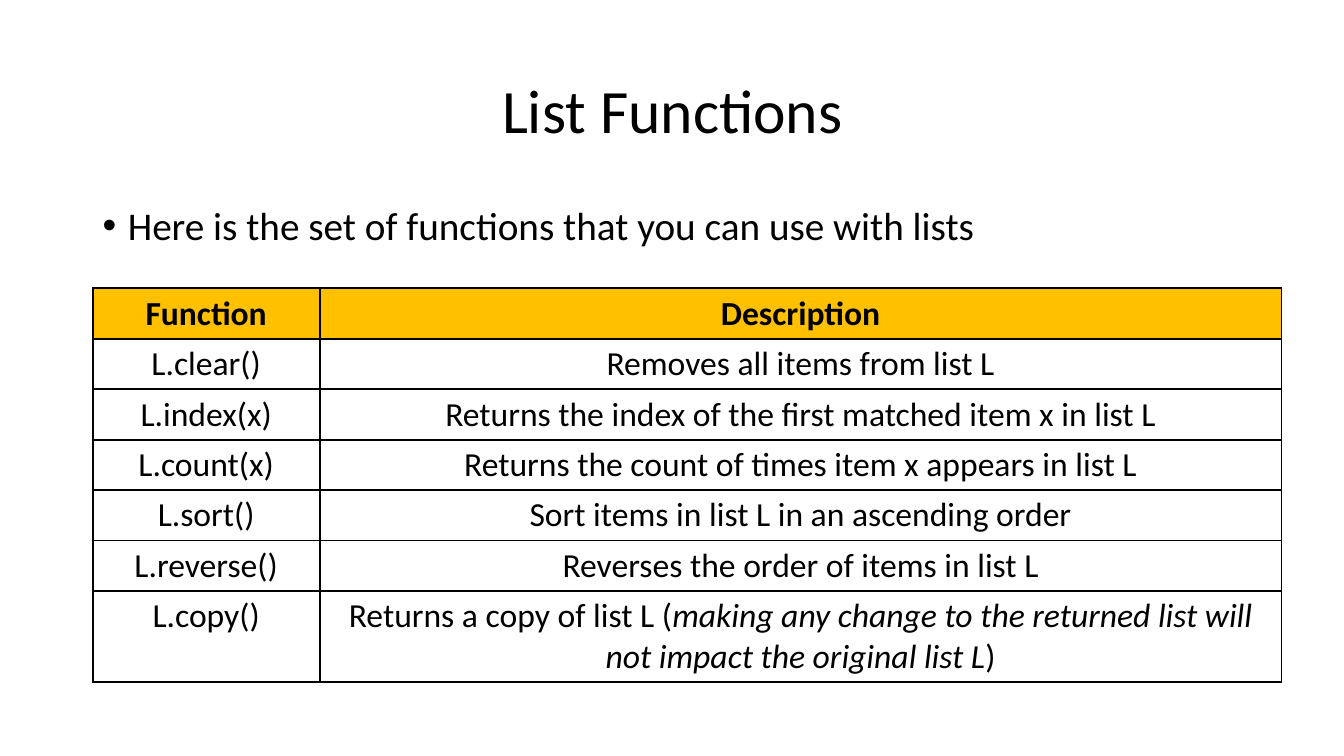
from lxml.etree import SubElement
from pptx import Presentation
from pptx.dml.color import RGBColor
from pptx.enum.text import MSO_ANCHOR, PP_ALIGN
from pptx.oxml.ns import qn
from pptx.util import Inches, Pt

SLIDE_SIZE = (13.33, 7.5)
MARGIN = 0.92
CONTENT_WIDTH = 11.5
TITLE = "List Functions"
INTRO = "Here is the set of functions that you can use with lists"
HEADER = ("Function", "Description")
FUNCTIONS = [
    ("L.clear()", "Removes all items from list L"),
    ("L.index(x)", "Returns the index of the first matched item x in list L"),
    ("L.count(x)", "Returns the count of times item x appears in list L"),
    ("L.sort()", "Sort items in list L in an ascending order"),
    ("L.reverse()", "Reverses the order of items in list L"),
    ("L.copy()", [
        ("Returns a copy of list L (", False),
        ("making any change to the returned list will not impact the original list L", True),
        (")", False),
    ]),
]
COLUMN_WIDTHS = (2.25, 9.54)
ROW_HEIGHT = 0.41
TABLE_TOP = 2.86
BORDER_WIDTH = 1.5
INK, HEADER_FILL, BODY_FILL = "000000", "FFC000", "FFFFFF"
CENTERED = {"alignment": PP_ALIGN.CENTER}
TITLE_FORMAT = {"alignment": PP_ALIGN.CENTER, "line_spacing": 0.9}
INTRO_FORMAT = {"line_spacing": 0.9, "space_before": Pt(10)}


def color(value):
    return RGBColor.from_string(value)


def apply_format(target, values):
    for name, value in values.items():
        setattr(target, name, value)


def write(paragraph, content, size, paragraph_format, bold=False):
    apply_format(paragraph, paragraph_format)
    pieces = [(content, False)] if isinstance(content, str) else content
    for text, italic in pieces:
        run = paragraph.add_run()
        run.text = text
        apply_format(run.font, {"name": "Calibri", "size": Pt(size), "bold": bold, "italic": italic})
        run.font.color.rgb = color(INK)


def add_text(slide, top, height, anchor, content, size, paragraph_format):
    box = slide.shapes.add_textbox(*map(Inches, (MARGIN, top, CONTENT_WIDTH, height)))
    apply_format(box.text_frame, {"word_wrap": True, "vertical_anchor": anchor})
    paragraph = box.text_frame.paragraphs[0]
    write(paragraph, content, size, paragraph_format)
    return paragraph


def add_bullet(paragraph, indent):
    properties = paragraph._p.get_or_add_pPr()
    properties.set("marL", str(Inches(indent)))
    properties.set("indent", str(-Inches(indent)))
    SubElement(properties, qn("a:buFont"), typeface="Arial")
    SubElement(properties, qn("a:buChar"), char="•")


def add_borders(cell):
    properties = cell._tc.get_or_add_tcPr()
    for position, side in enumerate(("lnL", "lnR", "lnT", "lnB")):
        line = properties.makeelement(qn(f"a:{side}"), {"w": str(Pt(BORDER_WIDTH))})
        fill = SubElement(line, qn("a:solidFill"))
        SubElement(fill, qn("a:srgbClr"), val=INK)
        properties.insert(position, line)


def add_function_table(slide):
    rows = [HEADER, *FUNCTIONS]
    frame = slide.shapes.add_table(
        len(rows), len(COLUMN_WIDTHS), Inches(MARGIN), Inches(TABLE_TOP),
        Inches(sum(COLUMN_WIDTHS)), Inches(ROW_HEIGHT * len(rows)),
    )
    table = frame.table
    for column, width in zip(table.columns, COLUMN_WIDTHS):
        column.width = Inches(width)
    for row_index, row in enumerate(rows):
        is_header = row_index == 0
        for column_index, content in enumerate(row):
            cell = table.cell(row_index, column_index)
            cell.fill.solid()
            cell.fill.fore_color.rgb = color(HEADER_FILL if is_header else BODY_FILL)
            write(cell.text_frame.paragraphs[0], content, 24, CENTERED, bold=is_header)
            add_borders(cell)


def main():
    """Build the slide on list functions and save it."""
    presentation = Presentation()
    width, height = map(Inches, SLIDE_SIZE)
    apply_format(presentation, {"slide_width": width, "slide_height": height})
    slide = presentation.slides.add_slide(presentation.slide_layouts[6])
    add_text(slide, 0.4, 1.45, MSO_ANCHOR.MIDDLE, TITLE, 44, TITLE_FORMAT)
    intro = add_text(slide, 2, 0.75, MSO_ANCHOR.TOP, INTRO, 28, INTRO_FORMAT)
    add_bullet(intro, 0.25)
    add_function_table(slide)
    presentation.save("out.pptx")


if __name__ == "__main__":
    main()
